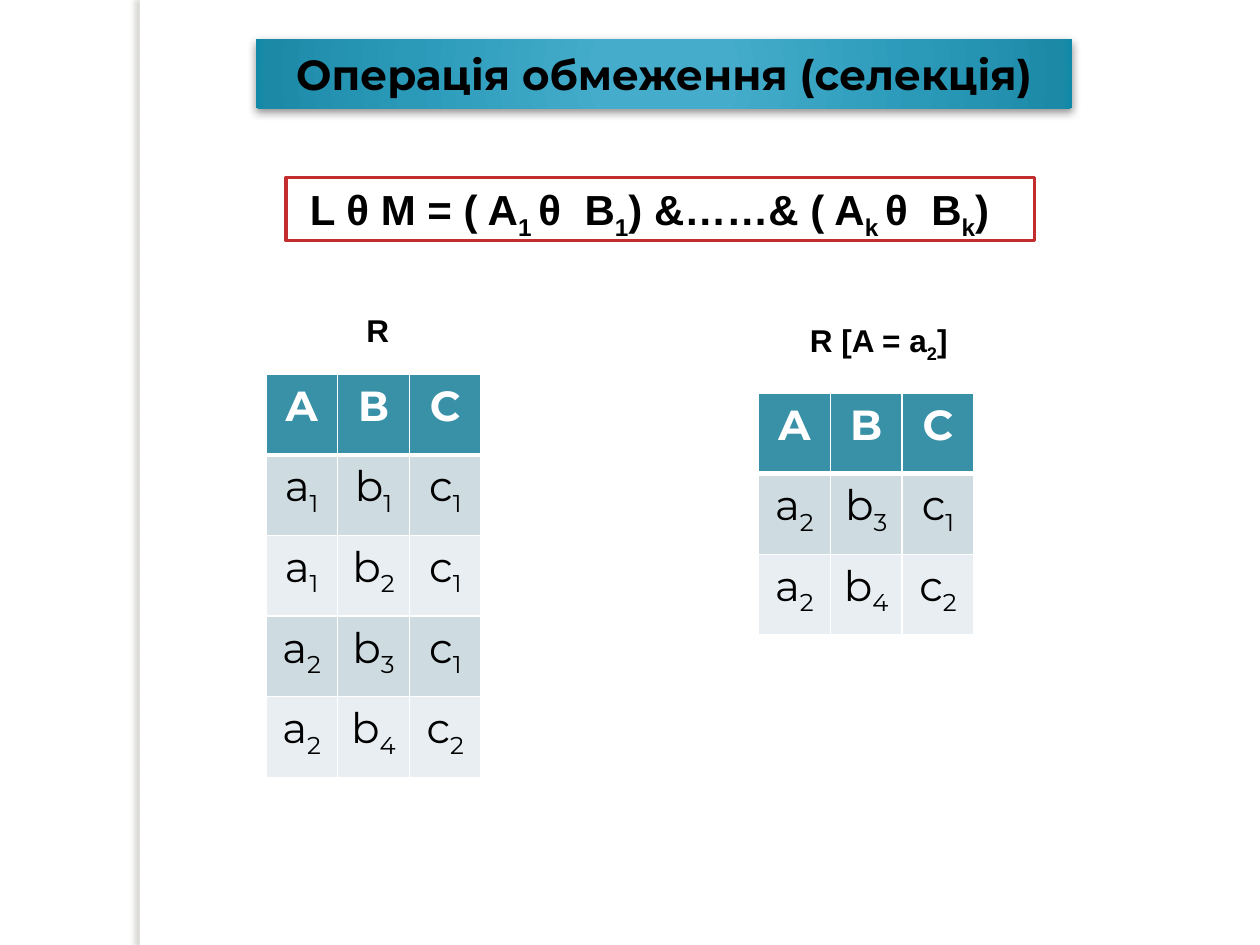
"""Build the slide on the restriction (selection) operation."""
from lxml.etree import SubElement as Sub
from pptx import Presentation
from pptx.dml.color import RGBColor as RGB
from pptx.enum.shapes import MSO_SHAPE as Shape
from pptx.enum.text import MSO_ANCHOR as Anchor, PP_ALIGN as Align
from pptx.oxml import parse_xml
from pptx.oxml.ns import nsdecls, qn
from pptx.util import Inches, Pt

THEME = {
    "head": "Montserrat", "body": "Arial", "big": 24, "small": 18,
    "ink": "000000", "paper": "FFFFFF", "red": "C32D2E", "teal": "3891A7",
    "bands": ("CEDCE1", "E8EEF1"), "edge": "736F63",
    "glow": ((0, "45ACCC"), (15, "45ACCB"), (62, "2B9AB9"), (97, "1C8AA7"), (100, "0E89A7")),
}
LOW = {"baseline": "-25000"}
WIDE = {"spc": "670"}

TITLE = "Операція обмеження (селекція)"
RULE = [
    ("L θ M = ( A", {}), ("1 ", LOW), ("θ", {}), (" ", WIDE), ("B", {}), ("1", LOW),
    (") &……& ( A", {}), ("k ", LOW), ("θ", {}), (" ", WIDE), ("B", {}), ("k", LOW), (")", {}),
]
LABELS = [
    ((2.81, 2.42, 0.38, 0.4), [("R", {})]),
    ((6.33, 2.5, 1.43, 0.4), [("R [A = a", {}), ("2", LOW), ("]", {})]),
]
TABLES = [
    ((2.11, 2.97), "АВC", ["a1 b1 c1", "a1 b2 c1", "a2 b3 c1", "a2 b4 c2"]),
    ((6.02, 3.12), "АBC", ["a2 b3 c1", "a2 b4 c2"]),
]
COL, ROW = 0.57, 0.64


def place(box):
    return [Inches(n) for n in box]


def paint(fill, tone):
    fill.solid()
    fill.fore_color.rgb = RGB.from_string(tone)


def write(frame, runs, size, face, tone="ink", bold=True, align=Align.LEFT):
    para = frame.paragraphs[0]
    para.alignment = align
    for text, attrs in runs:
        run = para.add_run()
        run.text = text
        for key, val in attrs.items():
            run.font._element.set(key, val)
    font = para.font
    font.size, font.name, font.bold = Pt(THEME[size]), THEME[face], bold
    font.color.rgb = RGB.from_string(THEME[tone])


def shade(shape, tone, alpha, blur, dist, angle):
    shape._element.spPr.append(parse_xml(
        f'<a:effectLst {nsdecls("a")}><a:outerShdw blurRad="{Pt(blur)}" dist="{Pt(dist)}" '
        f'dir="{angle * 60000}" algn="ctr" rotWithShape="0"><a:srgbClr val="{THEME[tone]}">'
        f'<a:alpha val="{alpha * 1000}"/></a:srgbClr></a:outerShdw></a:effectLst>'))


def glow(shape):
    stops = "".join(f'<a:gs pos="{pos * 1000}"><a:srgbClr val="{tone}"/></a:gs>'
                    for pos, tone in THEME["glow"])
    shape._element.spPr.append(parse_xml(
        f'<a:gradFill {nsdecls("a")} rotWithShape="1"><a:gsLst>{stops}</a:gsLst>'
        '<a:path path="circle"><a:fillToRect l="50000" t="50000" r="50000" b="50000"/>'
        '</a:path></a:gradFill>'))


def edge(cell, base):
    props = cell._tc.get_or_add_tcPr()
    for side, width in (("L", 1), ("R", 1), ("T", 1), ("B", base)):
        line = Sub(props, qn(f"a:ln{side}"), w=str(Pt(width)))
        Sub(Sub(line, qn("a:solidFill")), qn("a:srgbClr"), val=THEME["paper"])


def add_grid(slide, spot, heads, rows):
    cells = [[[(head, {})] for head in heads]]
    cells += [[[(name[0], {}), (name[1], LOW)] for name in row.split()] for row in rows]
    high, wide = len(cells), len(heads)
    box = place((*spot, COL * wide, ROW * high))
    grid = slide.shapes.add_table(high, wide, *box).table
    for col in grid.columns:
        col.width = Inches(COL)
    for i, row in enumerate(cells):
        grid.rows[i].height = Inches(ROW)
        top = i == 0
        tone = THEME["teal"] if top else THEME["bands"][(i - 1) % 2]
        for j, runs in enumerate(row):
            cell = grid.cell(i, j)
            edge(cell, 3 if top else 1)
            paint(cell.fill, tone)
            write(cell.text_frame, runs, "big", "head", "paper" if top else "ink", top, Align.CENTER)


def add_rect(slide, box):
    rect = slide.shapes.add_shape(Shape.RECTANGLE, *place(box))
    paint(rect.fill, THEME["paper"])
    return rect


def main():
    deck = Presentation()
    deck.slide_width, deck.slide_height = Inches(10), Inches(7.5)
    slide = deck.slides.add_slide(deck.slide_layouts[5])

    strip = add_rect(slide, (1.11, 0, 0.08, 7.5))
    strip.line.fill.background()
    shade(strip, "edge", 25, 3, 3, 180)

    title = slide.shapes.title
    title.left, title.top, title.width, title.height = place((2.03, 0.31, 6.48, 0.55))
    glow(title)
    shade(title, "ink", 43, 5, 2, 90)
    title.text_frame.vertical_anchor = Anchor.MIDDLE
    write(title.text_frame, [(TITLE, {})], "big", "head", align=Align.CENTER)

    rule = add_rect(slide, (2.27, 1.41, 5.94, 0.5))
    rule.shadow.inherit = False
    rule.line.color.rgb = RGB.from_string(THEME["red"])
    rule.line.width = Pt(2)
    frame = rule.text_frame
    frame.word_wrap, frame.vertical_anchor = True, Anchor.TOP
    frame.margin_left = Inches(0.19)
    write(frame, RULE, "big", "body")

    for box, runs in LABELS:
        label = slide.shapes.add_textbox(*place(box))
        label.text_frame.word_wrap = False
        write(label.text_frame, runs, "small", "body")
    for spec in TABLES:
        add_grid(slide, *spec)
    deck.save("out.pptx")


if __name__ == "__main__":
    main()
